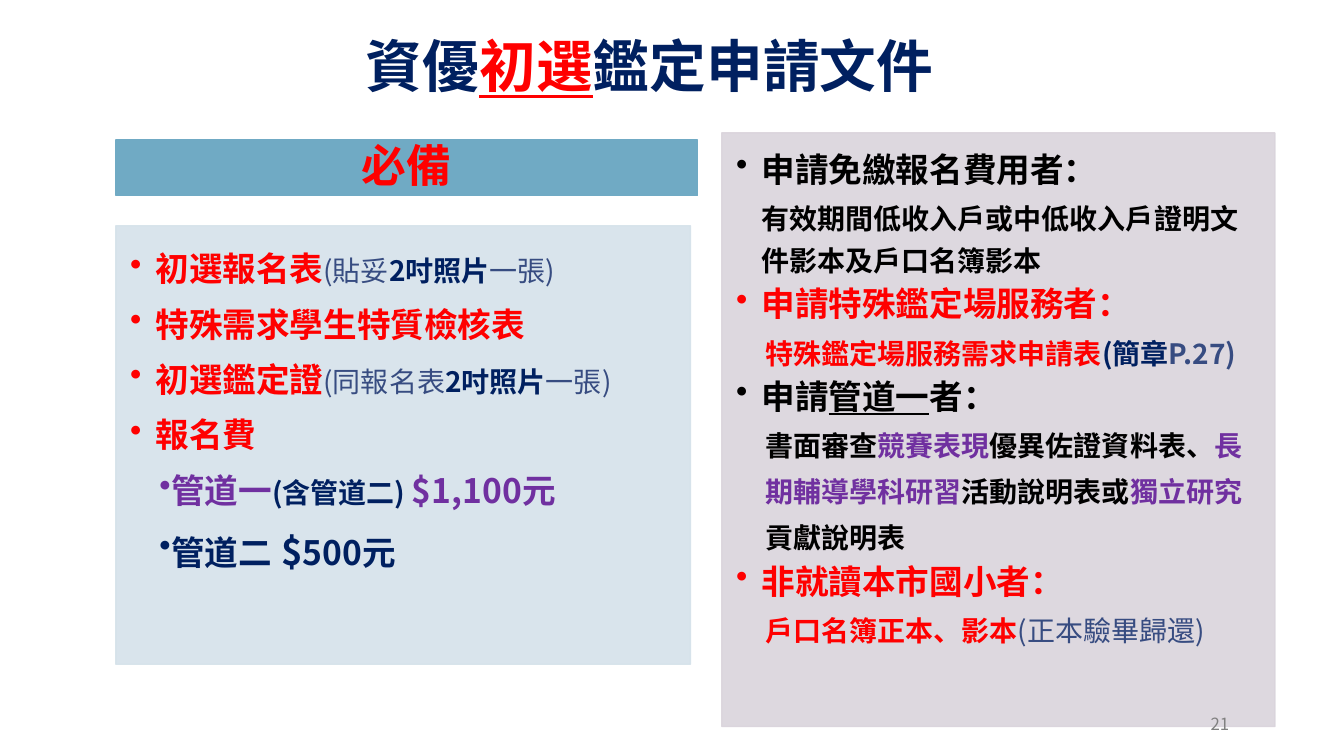
from pptx import Presentation
from pptx.dml.color import RGBColor
from pptx.enum.shapes import MSO_SHAPE
from pptx.enum.text import MSO_ANCHOR, PP_ALIGN
from pptx.util import Cm, Pt
from pptx.oxml.ns import qn
from lxml.etree import SubElement

NAVY = RGBColor(0x00, 0x20, 0x60)
RED = RGBColor(0xFF, 0x00, 0x00)
SLATE = RGBColor(0x37, 0x4C, 0x81)
PURPLE = RGBColor(0x70, 0x30, 0xA0)
BLACK = RGBColor(0x00, 0x00, 0x00)
GRAY = RGBColor(0x80, 0x80, 0x80)
TEAL = RGBColor(0x70, 0xAA, 0xC4)
PALE = RGBColor(0xD5, 0xE2, 0xEA)
MAUVE = RGBColor(0xDA, 0xD4, 0xDC)
SC = "Noto Sans CJK SC"
TC = "Noto Sans CJK TC"


def add_box(place, pads, anchor, fill=None, alpha=None):
    place = [Cm(n) for n in place]
    if fill is None:
        box = slide.shapes.add_textbox(*place)
    else:
        box = slide.shapes.add_shape(MSO_SHAPE.RECTANGLE, *place)
        box.shadow.inherit = False
        box.fill.solid()
        box.fill.fore_color.rgb = fill
        box.line.color.rgb = fill
        box.line.width = Pt(1)
        if alpha:
            for tone in box._element.spPr.iter(qn("a:srgbClr")):
                SubElement(tone, qn("a:alpha")).set("val", str(alpha * 1000))
    frame = box.text_frame
    frame.word_wrap = True
    frame.vertical_anchor = anchor
    frame.margin_left, frame.margin_top, frame.margin_right, frame.margin_bottom = [Cm(n) for n in pads]
    return frame


def add_rows(frame, rows, align, space, after):
    for i, (left, first, mark, runs) in enumerate(rows):
        para = frame.paragraphs[0] if i == 0 else frame.add_paragraph()
        para.alignment = align
        para.line_spacing = space
        para.space_after = Pt(after)
        props = para._p.get_or_add_pPr()
        props.set("marL", str(Cm(left)))
        props.set("indent", str(Cm(first)))
        if mark:
            SubElement(props, qn("a:buChar")).set("char", "•")
        for text, size, color, bold, *line in runs:
            run = para.add_run()
            run.text = text
            font = run.font
            font.size = Pt(size)
            font.bold = bold
            font.color.rgb = color
            font.underline = bool(line)
            font.name = TC if text in ("：", "21") else SC
            SubElement(run._r.rPr, qn("a:ea")).set("typeface", font.name)


deck = Presentation()
deck.slide_width, deck.slide_height = Cm(33.87), Cm(19.05)
slide = deck.slides.add_slide(deck.slide_layouts[6])

title = add_box((9.04, 0.08, 22.05, 2.54), (0.18, 0.1, 0.18, 0.1), MSO_ANCHOR.BOTTOM)
add_rows(title, [(0, 0, False, [
    ("資優", 40.5, NAVY, True),
    ("初選", 40.5, RED, True, "u"),
    ("鑑定申請文件", 40.5, NAVY, True),
])], PP_ALIGN.LEFT, 0.9, 0)

head = add_box((2.92, 3.53, 14.66, 1.4), (0.64, 0.36, 0.64, 0.36), MSO_ANCHOR.MIDDLE, TEAL)
add_rows(head, [(0, 0, False, [("必備", 32, RED, True)])], PP_ALIGN.CENTER, 0.9, 11)

pads = (0.36, 0.36, 0.48, 0.53)
item = (0.64, -0.64, True)
fee = (0.64, 0.1, True)
photo = [("2吋照片", 20, NAVY, True), ("一張)", 20, SLATE, False)]
needs = [
    (*item, [("初選報名表", 24, RED, True), ("(貼妥", 20, SLATE, False), *photo]),
    (*item, [("特殊需求學生特質檢核表", 24, RED, True)]),
    (*item, [("初選鑑定證", 24, RED, True), ("(同報名表", 20, SLATE, False), *photo]),
    (*item, [("報名費", 24, RED, True)]),
    (*fee, [("管道一", 24, PURPLE, True), ("(含管道二) ", 20, NAVY, True),
            ("$1,100元", 24, PURPLE, True)]),
    (*fee, [("管道二", 24, NAVY, True), (" ", 28, NAVY, True),
            ("$", 26, NAVY, True), ("500元", 24, NAVY, True)]),
]
must = add_box((2.92, 5.69, 14.48, 11.05), pads, MSO_ANCHOR.TOP, PALE, 90)
add_rows(must, needs, PP_ALIGN.LEFT, 1.2, 5)

hang = (0.64, 0, False)
note = (0, 0.74, False)
cases = [
    (*item, [("申請免繳報名費用者", 24, BLACK, True), ("：", 24, BLACK, True)]),
    (*hang, [("有效期間低收入戶或中低收入戶證明文件影本及戶口名簿影本", 20, BLACK, True)]),
    (*item, [("申請特殊鑑定場服務者", 24, RED, True), ("：", 24, RED, True)]),
    (*note, [("特殊鑑定場服務需求申請表", 20, RED, True), ("(簡章", 20, NAVY, True),
             ("P.27)", 20, SLATE, True)]),
    (*item, [("申請", 24, BLACK, True), ("管道一", 24, BLACK, True, "u"),
             ("者", 24, BLACK, True), ("：", 24, BLACK, True)]),
    (*note, [("書面審查", 20, BLACK, True), ("競賽表現", 20, PURPLE, True),
             ("優異佐證資料表、", 20, BLACK, True), ("長", 20, PURPLE, True)]),
    (*note, [("期輔導學科研習", 20, PURPLE, True), ("活動說明表或", 20, BLACK, True),
             ("獨立研究", 20, PURPLE, True)]),
    (*note, [("貢獻說明表", 20, BLACK, True)]),
    (*item, [("非就讀本市國小者", 24, RED, True), ("：", 24, RED, True)]),
    (*note, [("戶口名簿正本、影本", 20, RED, True), ("(正本驗畢歸還)", 20, SLATE, False)]),
]
extra = add_box((18.19, 3.35, 13.94, 14.96), pads, MSO_ANCHOR.TOP, MAUVE, 90)
add_rows(extra, cases, PP_ALIGN.LEFT, Pt(30), 3)

page = add_box((28.24, 17.78, 3.07, 0.89), (0.33, 0.18, 0.33, 0.18), MSO_ANCHOR.BOTTOM)
add_rows(page, [(0, 0, False, [("21", 12, GRAY, False)])], PP_ALIGN.RIGHT, 1, 0)

deck.save("out.pptx")
